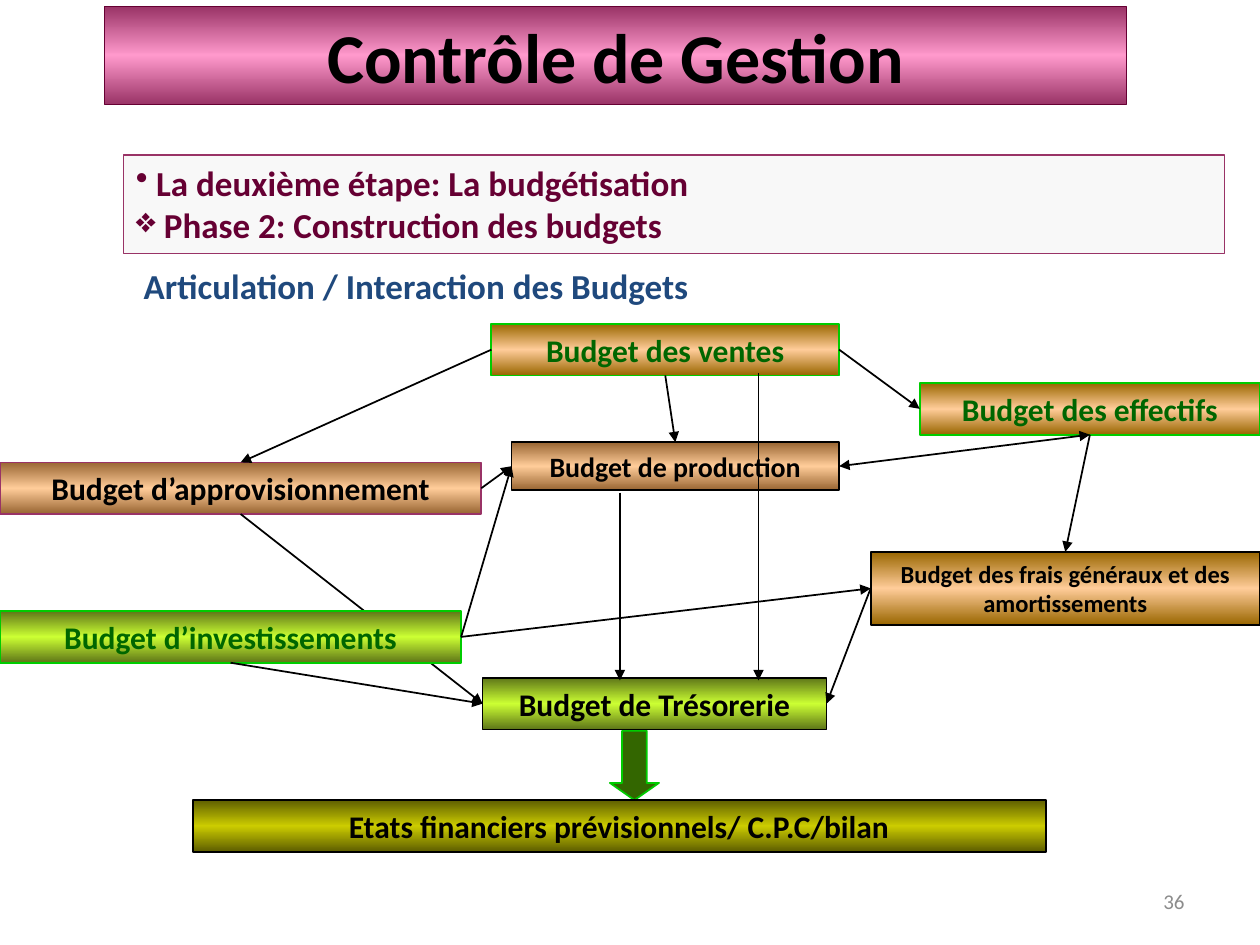
from copy import deepcopy
from dataclasses import dataclass

from lxml.etree import SubElement
from pptx import Presentation
from pptx.dml.color import RGBColor
from pptx.enum.shapes import MSO_CONNECTOR, MSO_SHAPE
from pptx.enum.text import MSO_ANCHOR, PP_ALIGN
from pptx.oxml.ns import qn
from pptx.util import Inches, Pt

COLUMNS, ROWS = 100, 75
WIDTH, HEIGHT = Inches(10), Inches(7.5)
TOP, LEFT, BOTTOM, RIGHT = range(4)

BLACK = RGBColor(0x00, 0x00, 0x00)
GREY = RGBColor(0x8C, 0x8C, 0x8C)
PALE = RGBColor(0xF8, 0xF8, 0xF8)
NAVY = RGBColor(0x1F, 0x49, 0x7D)
WINE = RGBColor(0x66, 0x00, 0x33)
PLUM = RGBColor(0x99, 0x33, 0x66)
PINK = RGBColor(0xFF, 0x99, 0xCC)
PEACH = RGBColor(0xFF, 0xCC, 0x99)
OCHRE = RGBColor(0x99, 0x66, 0x00)
BROWN = RGBColor(0x99, 0x66, 0x33)
LIME = RGBColor(0xCC, 0xFF, 0x33)
MOSS = RGBColor(0x5E, 0x76, 0x18)
YELLOW = RGBColor(0xCC, 0xCC, 0x00)
OLIVE = RGBColor(0x5E, 0x5E, 0x00)
BRIGHT_GREEN = RGBColor(0x00, 0xCC, 0x00)
DARK_GREEN = RGBColor(0x00, 0x66, 0x00)
ARROW_GREEN = RGBColor(0x33, 0x66, 0x00)


@dataclass(frozen=True)
class Box:
    """A labelled rectangle placed on the grid, shaded from edge to middle."""

    text: str
    column: float
    row: float
    columns: float
    rows: float
    edge: RGBColor
    middle: RGBColor
    outline: RGBColor = BLACK
    colour: RGBColor = BLACK
    size: float = 18
    line_width: float = 1
    wrap: bool = True


@dataclass(frozen=True)
class Link:
    """An arrow from the side of one budget to the side of another."""

    source: str
    source_side: int
    target: str
    target_side: int
    both_ways: bool = False


TITLE = Box("Contrôle de Gestion", 8.3, 0.5, 81.1, 7.8, PLUM, PINK, WINE, size=40, line_width=0.75)
STATEMENTS = Box("Etats financiers prévisionnels/ C.P.C/bilan", 15.3, 63.5, 67.7, 4.1, OLIVE, YELLOW)
BUDGETS = {
    "sales": Box("Budget des ventes", 39, 25.7, 27.6, 4.1, OCHRE, PEACH, BRIGHT_GREEN, DARK_GREEN),
    "staff": Box("Budget des effectifs", 73, 30.4, 27, 4.1, OCHRE, PEACH, BRIGHT_GREEN, DARK_GREEN),
    "supply": Box("Budget d’approvisionnement", 0, 36.7, 38.2, 4.1, BROWN, PEACH, PLUM),
    "production": Box("Budget de production", 40.6, 35.1, 26, 3.8, BROWN, PEACH, size=16),
    "overheads": Box("Budget des frais généraux et des amortissements",
                     69.1, 43.8, 30.9, 5.8, OCHRE, PEACH, size=14),
    "cash": Box("Budget de Trésorerie", 38.3, 53.8, 27.3, 4.1, MOSS, LIME, wrap=False),
}
INVESTMENT = Box("Budget d’investissements", 0, 48.5, 36.6, 4.1, MOSS, LIME, BRIGHT_GREEN, DARK_GREEN)
LINKS = [
    Link("sales", RIGHT, "staff", LEFT),
    Link("staff", BOTTOM, "overheads", TOP),
    Link("sales", BOTTOM, "production", TOP),
    Link("staff", BOTTOM, "production", RIGHT, both_ways=True),
    Link("sales", LEFT, "supply", TOP),
    Link("supply", RIGHT, "production", LEFT),
    Link("overheads", LEFT, "cash", RIGHT),
    Link("supply", BOTTOM, "cash", LEFT),
]
INVESTMENT_LINKS = [
    Link("investment", RIGHT, "production", LEFT),
    Link("investment", BOTTOM, "cash", LEFT),
    Link("investment", RIGHT, "overheads", LEFT),
]
HEADINGS = [("•", " La deuxième étape: La budgétisation"), ("❖", " Phase 2: Construction des budgets")]


def across(columns: float) -> int:
    """Turn grid columns into a length."""
    return round(WIDTH * columns / COLUMNS)


def down(rows: float) -> int:
    """Turn grid rows into a length."""
    return round(HEIGHT * rows / ROWS)


def area(column: float, row: float, columns: float, rows: float) -> tuple:
    """Turn a grid area into left, top, width and height."""
    return across(column), down(row), across(columns), down(rows)


def add_text(paragraph, text: str, size: float, colour: RGBColor, bold: bool = True) -> None:
    """Add one formatted run to a paragraph."""
    run = paragraph.add_run()
    run.text = text
    run.font.name = "Calibri"
    run.font.size = Pt(size)
    run.font.bold = bold
    run.font.color.rgb = colour


def add_label(slide, place: tuple, text: str, size: float, colour: RGBColor, bold: bool, align):
    """Add a plain text box holding one line."""
    frame = slide.shapes.add_textbox(*place).text_frame
    frame.word_wrap = True
    frame.paragraphs[0].alignment = align
    add_text(frame.paragraphs[0], text, size, colour, bold)
    return frame


def add_outlined(slide, kind, place: tuple, outline: RGBColor, line_width: float):
    """Add a shadowless preset shape with an outline."""
    shape = slide.shapes.add_shape(kind, *place)
    shape.shadow.inherit = False
    shape.line.color.rgb = outline
    shape.line.width = Pt(line_width)
    return shape


def add_box(slide, box: Box):
    """Add a shaded rectangle with its centred text."""
    place = area(box.column, box.row, box.columns, box.rows)
    shape = add_outlined(slide, MSO_SHAPE.RECTANGLE, place, box.outline, box.line_width)
    shape.fill.gradient()
    shape.fill.gradient_angle = 270
    stop_list = shape._element.spPr.find(".//" + qn("a:gsLst"))
    stop_list.append(deepcopy(stop_list[0]))
    for index, (stop, colour) in enumerate(zip(shape.fill.gradient_stops, (box.edge, box.middle, box.edge))):
        stop.position = index / 2
        stop.color.rgb = colour
    frame = shape.text_frame
    frame.word_wrap = box.wrap
    frame.vertical_anchor = MSO_ANCHOR.MIDDLE
    frame.paragraphs[0].alignment = PP_ALIGN.CENTER
    add_text(frame.paragraphs[0], box.text, box.size, box.colour)
    return shape


def add_arrow(slide, ends: tuple = (0, 0, 0, 0), width: float = 1, both_ways: bool = False):
    """Add a straight black arrow without a shadow."""
    connector = slide.shapes.add_connector(MSO_CONNECTOR.STRAIGHT, *ends)
    connector.line.color.rgb = BLACK
    connector.line.width = Pt(width)
    line = connector.line._get_or_add_ln()
    for tag in ("a:headEnd", "a:tailEnd") if both_ways else ("a:tailEnd",):
        SubElement(line, qn(tag), type="triangle")
    SubElement(connector._element.spPr, qn("a:effectLst"))
    return connector


def add_links(slide, links: list, shapes: dict) -> None:
    """Join the budgets with arrows."""
    for link in links:
        arrow = add_arrow(slide, both_ways=link.both_ways)
        arrow.begin_connect(shapes[link.source], link.source_side)
        arrow.end_connect(shapes[link.target], link.target_side)


def add_headings(slide) -> None:
    """Add the panel with the two bulleted headings."""
    panel = add_outlined(slide, MSO_SHAPE.RECTANGLE, area(9.8, 12.3, 87.4, 7.8), PLUM, 0.75)
    panel.fill.solid()
    panel.fill.fore_color.rgb = PALE
    frame = panel.text_frame
    frame.word_wrap = True
    frame.vertical_anchor = MSO_ANCHOR.TOP
    for index, (bullet, text) in enumerate(HEADINGS):
        paragraph = frame.add_paragraph() if index else frame.paragraphs[0]
        paragraph.alignment = PP_ALIGN.LEFT
        SubElement(paragraph._p.get_or_add_pPr(), qn("a:buChar"), char=bullet)
        add_text(paragraph, text, 20, WINE)


def main() -> None:
    """Build the slide on the links between budgets."""
    presentation = Presentation()
    presentation.slide_width, presentation.slide_height = WIDTH, HEIGHT
    slide = presentation.slides.add_slide(presentation.slide_layouts[6])
    number = add_label(slide, area(71.7, 69.5, 23.3, 4), "36", 12, GREY, False, PP_ALIGN.RIGHT)
    number.vertical_anchor = MSO_ANCHOR.MIDDLE
    subtitle = add_label(slide, area(10.6, 20.2, 54.3, 5), "Articulation / Interaction des Budgets",
                         20, NAVY, True, PP_ALIGN.LEFT)
    subtitle.margin_left = subtitle.margin_top = Inches(0.08)
    down_arrow = add_outlined(slide, MSO_SHAPE.DOWN_ARROW, area(48.4, 58, 3.9, 5.5), BRIGHT_GREEN, 1)
    down_arrow.adjustments[1] = 0.35
    down_arrow.fill.solid()
    down_arrow.fill.fore_color.rgb = ARROW_GREEN
    add_box(slide, STATEMENTS)
    shapes = {name: add_box(slide, box) for name, box in BUDGETS.items()}
    add_links(slide, LINKS, shapes)
    shapes["investment"] = add_box(slide, INVESTMENT)
    add_links(slide, INVESTMENT_LINKS, shapes)
    for column, row, width in ((49.2, 39.1, 1), (60.2, 29.6, 0.75)):
        add_arrow(slide, (across(column), down(row), across(column), down(54)), width)
    add_box(slide, TITLE)
    add_headings(slide)
    presentation.save("out.pptx")


if __name__ == "__main__":
    main()
